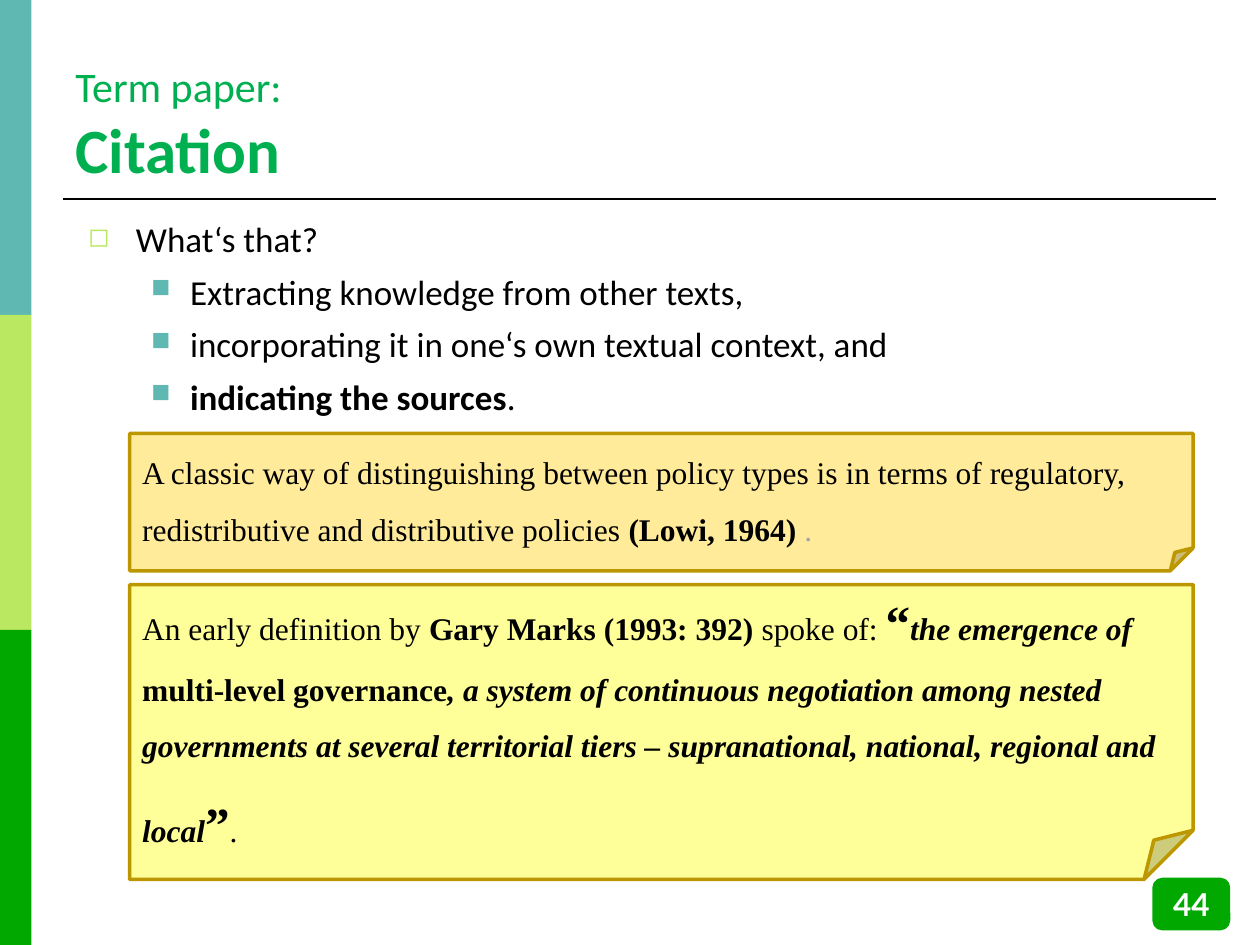
from dataclasses import dataclass

from lxml.etree import SubElement
from pptx import Presentation
from pptx.dml.color import RGBColor
from pptx.enum.shapes import MSO_CONNECTOR, MSO_SHAPE
from pptx.enum.text import MSO_ANCHOR, PP_ALIGN
from pptx.oxml.ns import qn
from pptx.util import Inches, Pt


@dataclass(frozen=True)
class Theme:
    sans: str = "Calibri"
    serif: str = "Times New Roman"
    badge: str = "Lato"
    black: str = "000000"
    white: str = "FFFFFF"
    title: str = "00B050"
    teal: str = "5FB8B2"
    lime: str = "BAE860"
    green: str = "00A800"
    gold: str = "BD9700"
    cream: str = "FFEB99"
    yellow: str = "FFFF99"
    grey: str = "A6A6A6"
    head: int = 36
    lead: int = 24
    body: int = 20
    note: int = 18
    quote: int = 28


THEME = Theme()


def rgb(code):
    return RGBColor.from_string(code)


def write(para, text, size=THEME.note, font=THEME.sans, color=THEME.black,
          bold=False, italic=False):
    run = para.add_run()
    run.text = text
    face = run.font
    face.size, face.name = Pt(size), font
    face.bold, face.italic = bold, italic
    face.color.rgb = rgb(color)


def add_text(slide, box, anchor=MSO_ANCHOR.TOP):
    frame = slide.shapes.add_textbox(*map(Inches, box)).text_frame
    frame.word_wrap = True
    frame.vertical_anchor = anchor
    return frame


def add_block(slide, kind, box, fill, line=None):
    shape = slide.shapes.add_shape(kind, *map(Inches, box))
    shape.shadow.inherit = False
    shape.fill.solid()
    shape.fill.fore_color.rgb = rgb(fill)
    if line:
        shape.line.color.rgb = rgb(line)
        shape.line.width = Pt(2)
    else:
        shape.line.fill.background()
    frame = shape.text_frame
    frame.word_wrap = True
    frame.vertical_anchor = MSO_ANCHOR.MIDDLE
    return frame.paragraphs[0]


def add_rule(slide, left, right, top):
    rule = slide.shapes.add_connector(
        MSO_CONNECTOR.STRAIGHT, *map(Inches, (left, top, right, top)))
    rule.line.color.rgb = rgb(THEME.black)
    rule.line.width = Pt(1.5)
    SubElement(rule._element.spPr, qn("a:effectLst"))


def set_bullet(para, mark, color, left, hang):
    props = para._p.get_or_add_pPr()
    props.set("marL", str(Inches(left)))
    props.set("indent", str(-Inches(hang)))
    tint = SubElement(props, qn("a:buClr"))
    SubElement(tint, qn("a:srgbClr"), val=color)
    SubElement(props, qn("a:buSzPct"), val="75000")
    SubElement(props, qn("a:buChar"), char=mark)


def add_title(slide):
    frame = add_text(slide, (0.5, 0.28, 9.15, 1.25), MSO_ANCHOR.BOTTOM)
    para = frame.paragraphs[0]
    write(para, "Term paper:", size=THEME.lead, color=THEME.title)
    para.add_line_break()
    write(para, "Citation", size=THEME.head, color=THEME.title, bold=True)


def add_list(slide, items):
    """Fill the body from (level, runs) pairs; a run is (text, bold)."""
    marks = (("◻", THEME.lime, 0.38, 0.38), ("■", THEME.teal, 0.81, 0.31))
    frame = add_text(slide, (0.6, 1.68, 9.15, 5.46))
    for index, (level, runs) in enumerate(items):
        para = frame.add_paragraph() if index else frame.paragraphs[0]
        para.level = level
        set_bullet(para, *marks[level])
        para.space_after = Pt(0.3 * THEME.body)
        for text, bold in runs:
            write(para, text, size=THEME.body, bold=bold)


def add_note(slide, top, height, fill, runs):
    """Add a folded sheet from (text, format) runs."""
    para = add_block(slide, MSO_SHAPE.FOLDED_CORNER,
                     (1.03, top, 8.44, height), fill, THEME.gold)
    para.alignment = PP_ALIGN.LEFT
    para.line_spacing = 1.5
    for text, style in runs:
        write(para, text, font=THEME.serif, **style)


def add_number(slide, text):
    para = add_block(slide, MSO_SHAPE.ROUNDED_RECTANGLE,
                     (9.16, 6.98, 0.59, 0.39), THEME.green, THEME.green)
    para.alignment = PP_ALIGN.CENTER
    write(para, text, font=THEME.badge, color=THEME.white, bold=True)


def main():
    deck = Presentation()
    deck.slide_width, deck.slide_height = Inches(10), Inches(7.5)
    slide = deck.slides.add_slide(deck.slide_layouts[6])

    for index, color in enumerate((THEME.teal, THEME.lime, THEME.green)):
        add_block(slide, MSO_SHAPE.RECTANGLE, (0, 2.5 * index, 0.25, 2.5), color)
    add_rule(slide, 0.5, 9.65, 1.58)
    add_title(slide)
    add_list(slide, [
        (0, [("What‘s that?", False)]),
        (1, [("Extracting knowledge from other texts,", False)]),
        (1, [("incorporating it in one‘s own textual context, and", False)]),
        (1, [("indicating the sources", True), (".", False)]),
    ])

    plain, bold = {}, {"bold": True}
    slant = {"bold": True, "italic": True}
    mark = {"bold": True, "size": THEME.quote}
    add_note(slide, 3.44, 1.09, THEME.cream, [
        ("A classic way of distinguishing between policy types is in terms of "
         "regulatory, redistributive and distributive policies ", plain),
        ("(Lowi, 1964) ", bold),
        (".", {"color": THEME.grey}),
    ])
    add_note(slide, 4.64, 2.34, THEME.yellow, [
        ("An early definition by ", plain),
        ("Gary Marks (1993: 392) ", bold),
        ("spoke of: ", plain),
        ("“", mark),
        ("the emergence of ", slant),
        ("multi-level governance", bold),
        (", a system of continuous negotiation among nested governments at "
         "several territorial tiers – supranational, national, regional and "
         "local", slant),
        ("”", {**mark, "italic": False}),
        (".", plain),
    ])
    add_number(slide, "44")
    deck.save("out.pptx")


if __name__ == "__main__":
    main()
